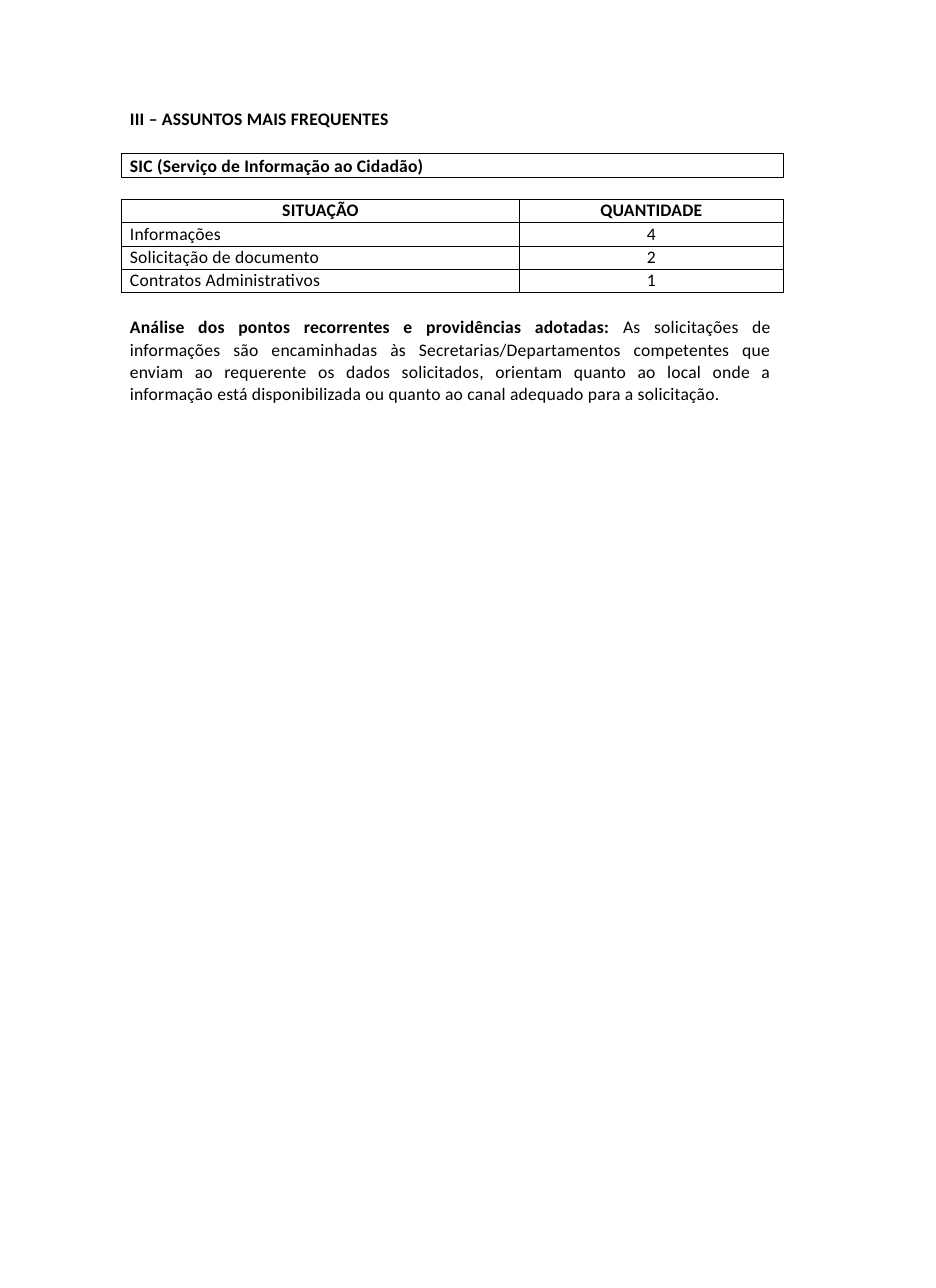
import lxml.etree
import pptx
import pptx.dml.color
import pptx.enum.shapes
import pptx.enum.text
import pptx.oxml.ns
import pptx.util

Inches, Pt = pptx.util.Inches, pptx.util.Pt
ALIGN = pptx.enum.text.PP_ALIGN
MIDDLE = pptx.enum.text.MSO_ANCHOR.MIDDLE
qn = pptx.oxml.ns.qn


def rgb(color):
    return pptx.dml.color.RGBColor.from_string(color)


def write(tf, *texts, bold=False, align=ALIGN.LEFT, before=0.2):
    """Fill the first paragraph with one run per text, slightly letter-spaced."""
    p = tf.paragraphs[0]
    p.alignment, p.space_before = align, Pt(before)
    p.font.name, p.font.size, p.font.bold = "Calibri", Pt(11.5), bold
    p.font.color.rgb = rgb("000000")
    for text in texts:
        r = p.add_run()
        r.text = text
        r.font._element.set("spc", "15")
    return p


prs = pptx.Presentation()
prs.slide_width, prs.slide_height = Inches(8.5), Inches(11.7)
s = prs.slides.add_slide(prs.slide_layouts[6])

# Section title and closing analysis
text_frames = []
for top, width, height in ((0.96, 2.8, 0.23), (2.84, 5.83, 0.84)):
    tf = s.shapes.add_textbox(Inches(1.17), Inches(top), Inches(width), Inches(height)).text_frame
    tf.word_wrap = True
    tf.margin_left, tf.margin_top = Inches(0.01), Inches(0.02)
    tf.margin_right = tf.margin_bottom = 0
    text_frames.append(tf)
title, analysis = text_frames

write(title, "III – ASSUNTOS MAIS FREQUENTES", bold=True, before=1.4)
p = write(
    analysis,
    "Análise dos pontos recorrentes e providências adotadas: ",
    "As solicitações de informações são encaminhadas às Secretarias/Departamentos "
    "competentes que enviam ao requerente os dados solicitados, orientam quanto ao "
    "local onde a informação está disponibilizada ou quanto ao canal adequado para "
    "a solicitação.",
    align=ALIGN.JUSTIFY, before=0.5)
p.runs[0].font.bold = True
p.line_spacing = 1.06

# Framed service name
sp = s.shapes.add_shape(pptx.enum.shapes.MSO_SHAPE.RECTANGLE,
                        Inches(1.1), Inches(1.39), Inches(6.01), Inches(0.22))
sp.shadow.inherit = False
sp.fill.background()
sp.line.color.rgb, sp.line.width = rgb("000000"), Pt(0.36)
tf = sp.text_frame
tf.margin_left = Inches(0.08)
tf.margin_top = tf.margin_right = tf.margin_bottom = 0
tf.vertical_anchor = MIDDLE
write(tf, "SIC (Serviço de Informação ao Cidadão)", bold=True)

# Requests by subject
rows = [
    ("SITUAÇÃO", "QUANTIDADE"),
    ("Informações", "4"),
    ("Solicitação de documento", "2"),
    ("Contratos Administrativos", "1"),
]
table = s.shapes.add_table(len(rows), 2, Inches(1.1), Inches(1.81),
                           Inches(6.01), Inches(0.85)).table
for column, width in zip(table.columns, (3.62, 2.39)):
    column.width = Inches(width)
for i, row in enumerate(rows):
    for j, text in enumerate(row):
        cell = table.cell(i, j)
        is_label = i > 0 and j == 0
        cell.fill.background()
        cell.vertical_anchor = MIDDLE
        cell.margin_left = Inches(0.08 if is_label else 0)
        cell.margin_top = cell.margin_right = cell.margin_bottom = 0
        write(cell.text_frame, text, bold=i == 0,
              align=ALIGN.LEFT if is_label else ALIGN.CENTER)
        # Borders come before the fill in the cell properties
        tcPr = cell._tc.get_or_add_tcPr()
        for k, side in enumerate(("a:lnL", "a:lnR", "a:lnT", "a:lnB")):
            ln = lxml.etree.Element(qn(side), w=str(Pt(0.5)))
            fill = lxml.etree.SubElement(ln, qn("a:solidFill"))
            lxml.etree.SubElement(fill, qn("a:srgbClr"), val="000000")
            tcPr.insert(k, ln)

prs.save("out.pptx")
